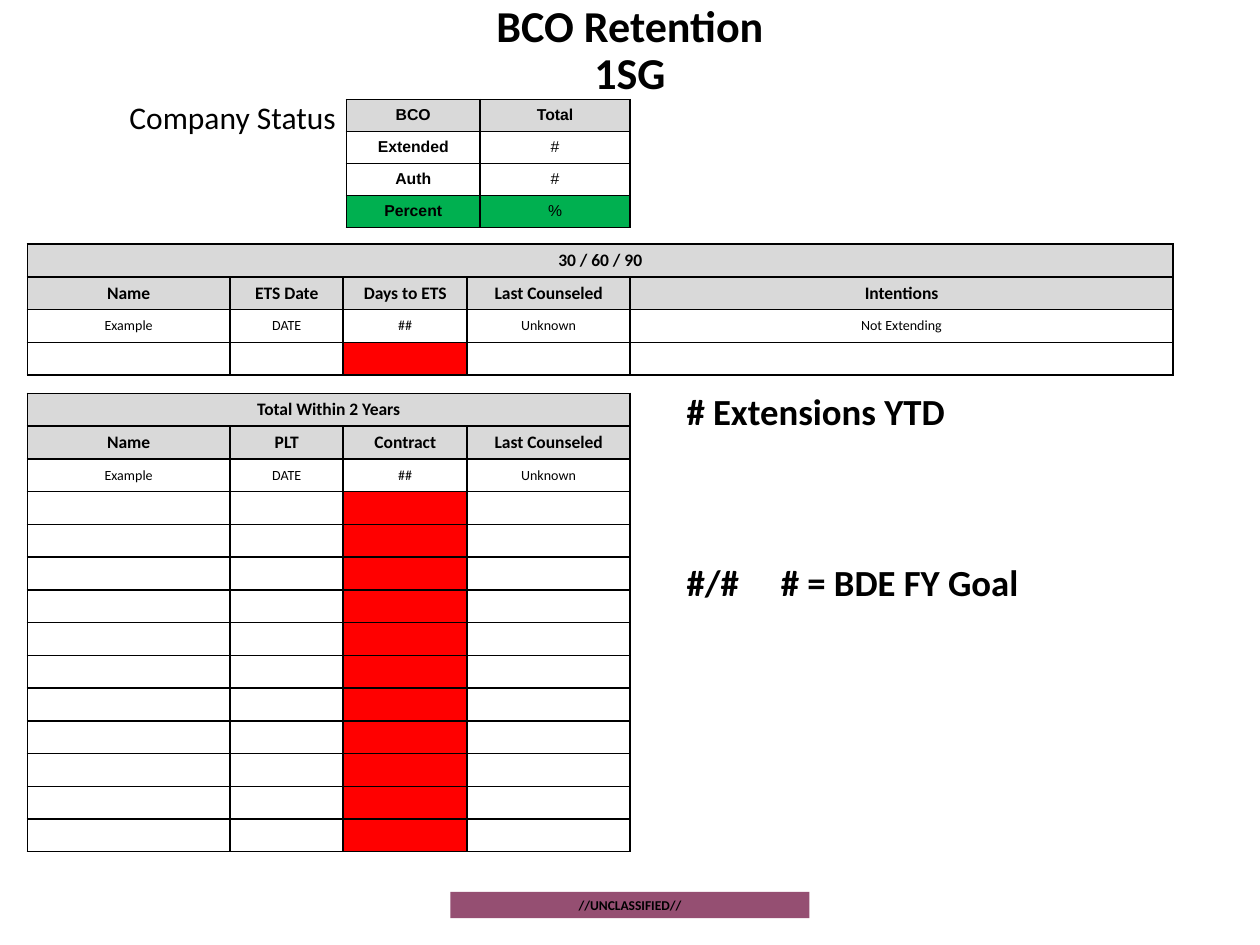
from dataclasses import dataclass

from lxml import etree
from pptx import Presentation
from pptx.dml.color import RGBColor
from pptx.enum.shapes import MSO_SHAPE
from pptx.enum.text import MSO_ANCHOR, PP_ALIGN
from pptx.oxml.ns import qn
from pptx.util import Cm, Pt

LEFT, CENTER = PP_ALIGN.LEFT, PP_ALIGN.CENTER
TOP, MIDDLE = MSO_ANCHOR.TOP, MSO_ANCHOR.MIDDLE
RECTANGLE = MSO_SHAPE.RECTANGLE


@dataclass(frozen=True)
class Theme:
    font: str = "Calibri"
    status_font: str = "Arial"
    black: RGBColor = RGBColor(0x00, 0x00, 0x00)
    white: RGBColor = RGBColor(0xFF, 0xFF, 0xFF)
    header: RGBColor = RGBColor(0xD9, 0xD9, 0xD9)
    alert: RGBColor = RGBColor(0xFF, 0x00, 0x00)
    good: RGBColor = RGBColor(0x00, 0xB0, 0x50)
    marking: RGBColor = RGBColor(0x95, 0x4F, 0x72)
    title_size: float = 25.2
    goal_size: float = 21
    label_size: float = 18
    header_size: float = 10
    status_size: float = 9
    body_size: float = 8
    marking_size: float = 7.7


THEME = Theme()


def style(frame, size, bold=False, align=LEFT, anchor=TOP, font=THEME.font, inset=(0, 0)):
    """Format every paragraph of a text frame; inset is (sides, top and bottom) in cm."""
    frame.word_wrap = True
    frame.vertical_anchor = anchor
    frame.margin_left = frame.margin_right = Cm(inset[0])
    frame.margin_top = frame.margin_bottom = Cm(inset[1])
    for paragraph in frame.paragraphs:
        paragraph.alignment = align
        paragraph.font.name = font
        paragraph.font.size = Pt(size)
        paragraph.font.bold = bold
        paragraph.font.color.rgb = THEME.black


def add_grid(left, top, widths, row_height, rows):
    """Add an unstyled table with 1 pt black borders and return it."""
    table = slide.shapes.add_table(
        len(rows), len(widths), Cm(left), Cm(top),
        Cm(sum(widths)), Cm(row_height * len(rows))).table
    table.first_row = table.horz_banding = False
    for column, width in zip(table.columns, widths):
        column.width = Cm(width)
    for row, texts in zip(table.rows, rows):
        row.height = Cm(row_height)
        for cell, text in zip(row.cells, texts):
            cell.text = text
            properties = cell._tc.get_or_add_tcPr()
            for side in ("a:lnL", "a:lnR", "a:lnT", "a:lnB"):
                line = etree.SubElement(properties, qn(side), w=str(Pt(1)))
                paint = etree.SubElement(line, qn("a:solidFill"))
                etree.SubElement(paint, qn("a:srgbClr"), val=str(THEME.black))
            cell.fill.background()
    return table


presentation = Presentation()
presentation.slide_width, presentation.slide_height = Cm(25.4), Cm(19.05)
slide = presentation.slides.add_slide(presentation.slide_layouts[6])

# Classification marking
marking = slide.shapes.add_shape(RECTANGLE, Cm(9.08), Cm(17.98), Cm(7.24), Cm(0.53))
marking.shadow.inherit = False
marking.fill.solid()
marking.fill.fore_color.rgb = THEME.marking
marking.line.fill.background()
marking.text_frame.text = "//UNCLASSIFIED//"
style(marking.text_frame, THEME.marking_size, True, CENTER, MIDDLE, inset=(0.18, 0.1))

# Title
title = slide.shapes.add_textbox(Cm(1.75), Cm(0.23), Cm(21.9), Cm(1.63)).text_frame
title.text = "BCO Retention\v1SG"
style(title, THEME.title_size, True, CENTER, MIDDLE, inset=(0.18, 0.1))
title.paragraphs[0].line_spacing = 0.9

# Company status
status_label = slide.shapes.add_textbox(Cm(2.36), Cm(1.85), Cm(5.21), Cm(1.8)).text_frame
status_label.text = "Company Status"
style(status_label, THEME.label_size, inset=(0.25, 0.13))

status = add_grid(6.98, 2.01, [2.7, 3.02], 0.64, [
    ["BCO", "Total"], ["Extended", "#"], ["Auth", "#"], ["Percent", "%"]])
status_fills = [THEME.header, THEME.white, THEME.white, THEME.good]
for row_index, (row, fill) in enumerate(zip(status.rows, status_fills)):
    for column_index, cell in enumerate(row.cells):
        cell.fill.solid()
        cell.fill.fore_color.rgb = fill
        style(cell.text_frame, THEME.status_size, row_index == 0 or column_index == 0,
              CENTER, font=THEME.status_font)
        cell.margin_left = cell.margin_right = Cm(0.25)
        cell.margin_top = cell.margin_bottom = Cm(0.13)

# Soldier rosters: banner, column heads, one example, then open rows
person_widths = [4.09, 2.28, 2.5, 3.28]
rosters = [
    (4.92, person_widths + [10.95], 1, "30 / 60 / 90",
     ["Name", "ETS Date", "Days to ETS", "Last Counseled", "Intentions"],
     ["Example", "DATE", "##", "Unknown", "Not Extending"]),
    (7.93, person_widths, 11, "Total Within 2 Years",
     ["Name", "PLT", "Contract", "Last Counseled"],
     ["Example", "DATE", "##", "Unknown"]),
]
for top, widths, open_rows, banner, heads, example in rosters:
    blanks = [""] * len(widths)
    roster = add_grid(0.55, top, widths, 0.66,
                      [[banner] + blanks[1:], heads, example] + [blanks] * open_rows)
    roster.cell(0, 0).merge(roster.cell(0, len(widths) - 1))
    for row_index, row in enumerate(roster.rows):
        is_header = row_index < 2
        for column_index, cell in enumerate(row.cells):
            style(cell.text_frame, THEME.header_size if is_header else THEME.body_size,
                  is_header, CENTER)
            cell.vertical_anchor = MIDDLE
            cell.margin_left = cell.margin_right = Cm(0.18 if is_header else 0.1)
            cell.margin_top = cell.margin_bottom = Cm(0.1 if is_header else 0.03)
            if is_header or (row_index > 2 and column_index == 2):
                cell.fill.solid()
                cell.fill.fore_color.rgb = THEME.header if is_header else THEME.alert

# Extension goals
goals = slide.shapes.add_textbox(Cm(13.84), Cm(7.93), Cm(8.59), Cm(4.8)).text_frame
goals.text = "# Extensions YTD\n#/#\t# = BDE FY Goal"
style(goals, THEME.goal_size, True)
extensions, fiscal_goal = goals.paragraphs
extensions.line_spacing = fiscal_goal.line_spacing = 0.9
fiscal_goal.space_before = Pt(75)
tab_stops = etree.Element(qn("a:tabLst"))
etree.SubElement(tab_stops, qn("a:tab"), pos=str(Cm(1.9)), algn="l")
fiscal_goal._p.pPr.find(qn("a:defRPr")).addprevious(tab_stops)

presentation.save("out.pptx")
